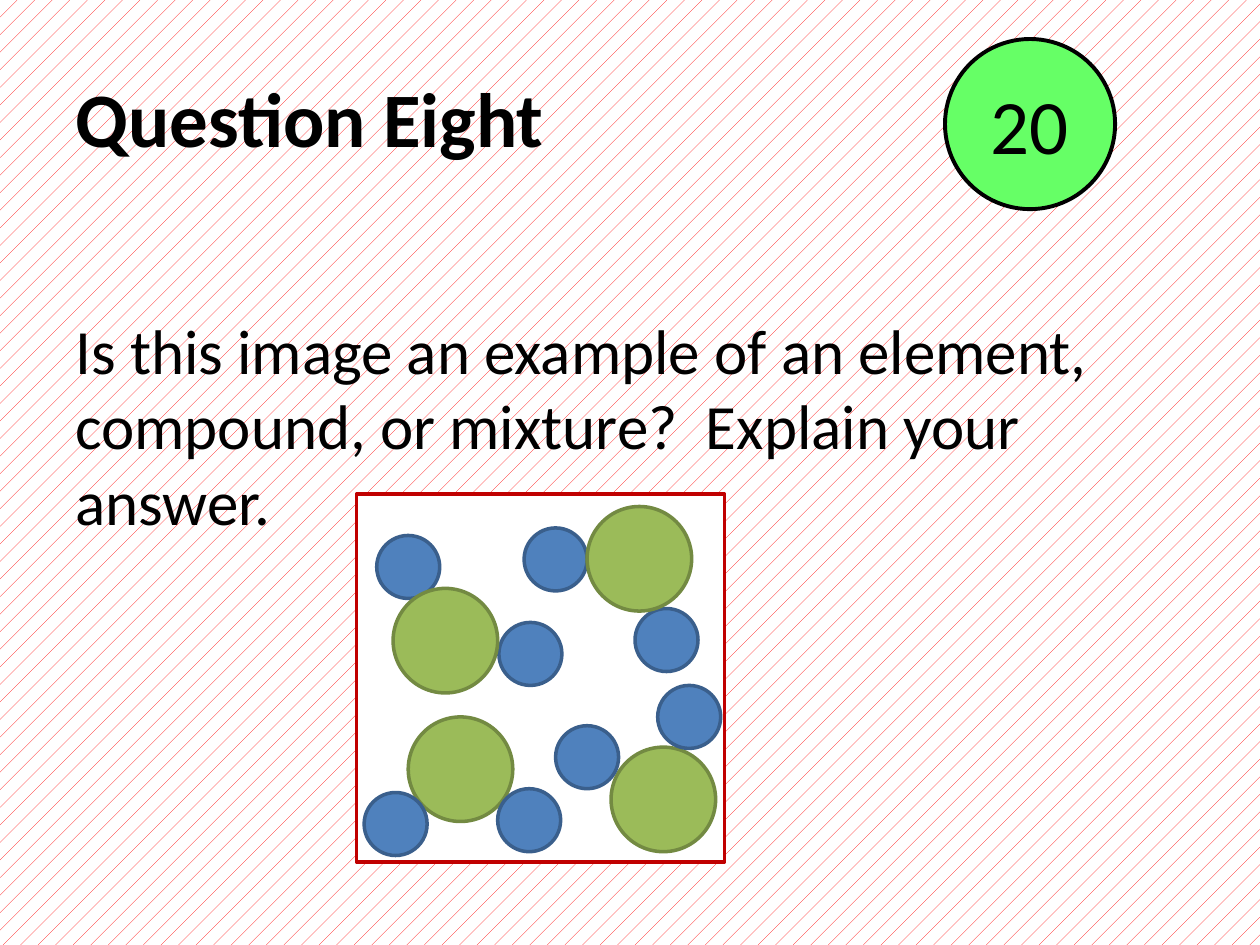
from pptx import Presentation
from pptx.dml.color import RGBColor as Rgb
from pptx.enum.dml import MSO_PATTERN as Pat
from pptx.enum.shapes import MSO_SHAPE as Geo
from pptx.enum.text import MSO_ANCHOR as Anchor, PP_ALIGN as Align
from pptx.util import Inches, Pt

BLUE = ("4F81BD", "3A5F8C", 0.5)
GREEN = ("9BBB59", "738A42", 0.83)
ATOMS = [
    (BLUE, [(4.16, 4.19), (5.04, 4.83), (2.99, 4.25), (3.96, 4.94)]),
    (GREEN, [(3.12, 4.67), (3.24, 5.69), (4.66, 4.02)]),
    (BLUE, [(3.95, 6.26), (2.89, 6.29)]),
    (GREEN, [(4.85, 5.93)]),
    (BLUE, [(5.22, 5.44), (4.41, 5.76)]),
]


def color(code):
    return Rgb.from_string(code)


def write(shape, text, size, bold=False, align=Align.LEFT, anchor=Anchor.MIDDLE, wrap=True):
    frame = shape.text_frame
    frame.text = text
    frame.word_wrap = wrap
    frame.vertical_anchor = anchor
    para = frame.paragraphs[0]
    para.alignment = align
    font = para.runs[0].font
    font.name = "Calibri"
    font.size = Pt(size)
    font.bold = bold
    font.color.rgb = color("000000")


def paint(slide):
    fill = slide.background.fill
    fill.patterned()
    fill.pattern = Pat.PERCENT_5
    fill.fore_color.rgb = color("FF0000")
    fill.back_color.rgb = color("FFFFFF")


def add_title(slide, text):
    title = slide.shapes.title
    title.left, title.top = Inches(0.5), Inches(0.3)
    title.width, title.height = Inches(9), Inches(1.25)
    write(title, text, 44, bold=True)


def add_body(slide, text):
    body = slide.shapes.add_textbox(Inches(0.5), Inches(2.42), Inches(9), Inches(4.28))
    write(body, text, 36, anchor=Anchor.TOP)


def add_form(slide, geo, left, top, size, fill, line, weight=2):
    form = slide.shapes.add_shape(geo, Inches(left), Inches(top), Inches(size), Inches(size))
    form.shadow.inherit = False
    form.fill.solid()
    form.fill.fore_color.rgb = color(fill)
    form.line.color.rgb = color(line)
    form.line.width = Pt(weight)
    return form


def main():
    deck = Presentation()
    deck.slide_width, deck.slide_height = Inches(10), Inches(7.5)
    slide = deck.slides.add_slide(deck.slide_layouts[5])
    paint(slide)
    add_title(slide, "Question Eight")
    add_body(slide, "Is this image an example of an element, compound, or mixture?  Explain your answer.")
    score = add_form(slide, Geo.OVAL, 7.5, 0.31, 1.35, "66FF66", "000000", 2.25)
    write(score, "20", 44, align=Align.CENTER, wrap=False)
    add_form(slide, Geo.RECTANGLE, 2.83, 3.92, 2.92, "FFFFFF", "C00000")
    for (fill, line, size), spots in ATOMS:
        for left, top in spots:
            add_form(slide, Geo.OVAL, left, top, size, fill, line)
    deck.save("out.pptx")


if __name__ == "__main__":
    main()
